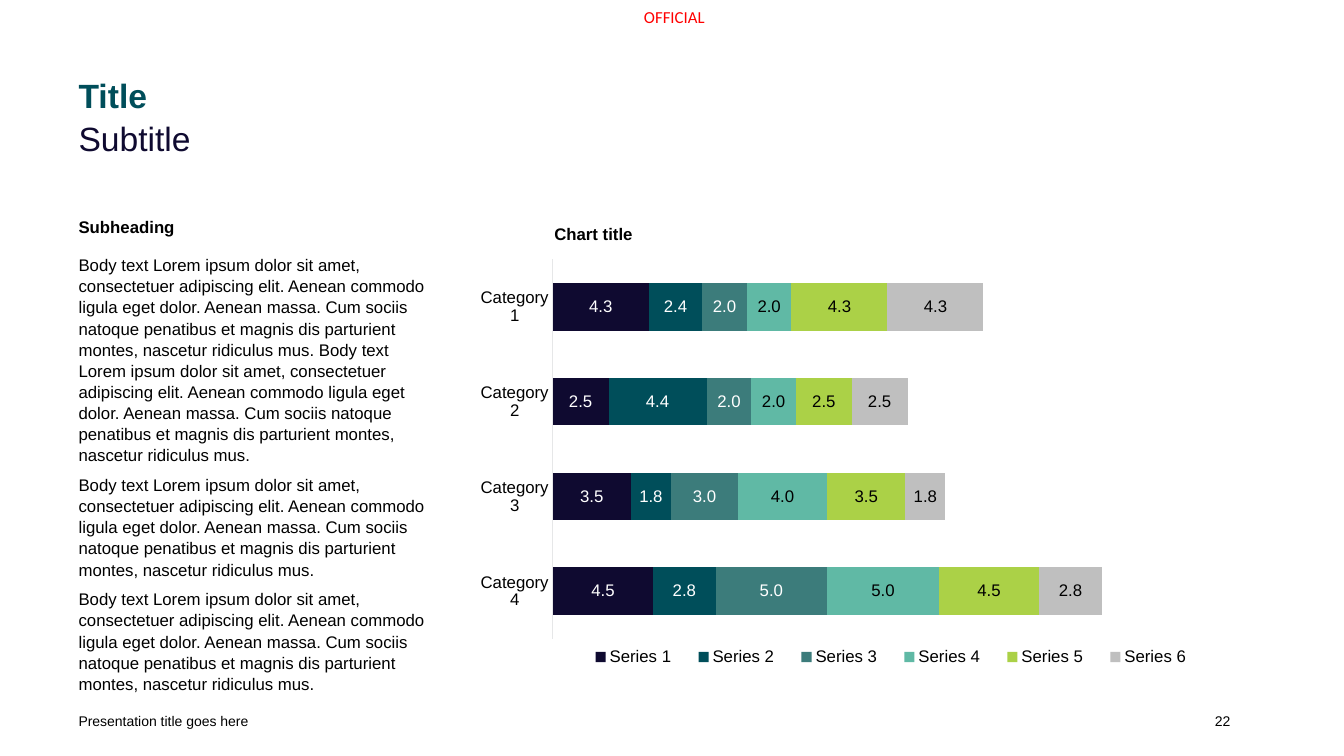
from lxml import etree
from pptx import Presentation
from pptx.chart.data import CategoryChartData
from pptx.dml.color import RGBColor
from pptx.enum.chart import XL_CHART_TYPE as ChartType
from pptx.enum.chart import XL_LEGEND_POSITION as LegendPosition
from pptx.enum.chart import XL_TICK_MARK as TickMark
from pptx.enum.text import MSO_ANCHOR as Anchor
from pptx.enum.text import MSO_AUTO_SIZE as AutoSize
from pptx.enum.text import PP_ALIGN as Align
from pptx.oxml.ns import qn
from pptx.util import Cm, Pt

# Colours
BLACK = RGBColor(0x00, 0x00, 0x00)
WHITE = RGBColor(0xFF, 0xFF, 0xFF)
RED = RGBColor(0xFF, 0x00, 0x00)
NAVY = RGBColor(0x0F, 0x0A, 0x30)
TEAL = RGBColor(0x00, 0x4E, 0x5A)
SEA = RGBColor(0x3C, 0x7C, 0x7B)
MINT = RGBColor(0x60, 0xB9, 0xA5)
LIME = RGBColor(0xAB, 0xD1, 0x47)
GREY = RGBColor(0xBF, 0xBF, 0xBF)
PALE = RGBColor(0xE6, 0xE7, 0xE8)

# Content
LOREM = ("Lorem ipsum dolor sit amet, consectetuer adipiscing elit. Aenean commodo "
         "ligula eget dolor. Aenean massa. Cum sociis natoque penatibus et magnis dis "
         "parturient montes, nascetur ridiculus mus.")
BODY = f"Body text {LOREM}"
CATEGORIES = [f"Category {n}" for n in range(1, 5)]
SERIES = [  # values, fill, label colour
    ((4.3, 2.5, 3.5, 4.5), NAVY, WHITE),
    ((2.4, 4.4, 1.8, 2.8), TEAL, WHITE),
    ((2, 2, 3, 5), SEA, WHITE),
    ((2, 2, 4, 5), MINT, BLACK),
    ((4.3, 2.5, 3.5, 4.5), LIME, BLACK),
    ((4.3, 2.5, 1.8, 2.8), GREY, BLACK),
]

LEFT = 1.98
CHART_LEFT = 11.99
CONTENT_TOP, CONTENT_HEIGHT = 5.44, 11.58
FOOTER_TOP, FOOTER_HEIGHT = 17.65, 1.02


def apply(target, values):
    for name, value in values.items():
        setattr(target, name, value)


class SlideBuilder:
    """Holds the text style and the slide being built."""

    def __init__(self, slide, font="Arial", size=12):
        self.slide, self.font, self.size = slide, font, size

    def style(self, font, color=BLACK, **changes):
        apply(font, {"name": self.font, "size": Pt(self.size), "bold": False} | changes)
        font.color.rgb = color

    def frame(self, shape, box, **changes):
        apply(shape, dict(zip(("left", "top", "width", "height"), map(Cm, box))))
        margins = dict.fromkeys(
            ("margin_left", "margin_top", "margin_right", "margin_bottom"), 0)
        apply(shape.text_frame, margins | {
            "word_wrap": True, "auto_size": AutoSize.NONE,
            "vertical_anchor": Anchor.TOP} | changes)
        return shape.text_frame

    def placeholder(self, index, box, paragraphs, line_spacing):
        """Fill a placeholder from (text, level, space after, font values)."""
        text_frame = self.frame(self.slide.placeholders[index], box)
        for number, (text, level, after, font) in enumerate(paragraphs):
            paragraph = text_frame.add_paragraph() if number else text_frame.paragraphs[0]
            apply(paragraph, {"level": level, "alignment": Align.LEFT,
                              "line_spacing": line_spacing,
                              "space_before": Pt(0), "space_after": Pt(after)})
            properties = paragraph._p.get_or_add_pPr()
            properties.set("marL", "0")
            properties.set("indent", "0")
            etree.SubElement(properties, qn("a:buNone"))
            run = paragraph.add_run()
            run.text = text
            self.style(run.font, **font)

    def label(self, box, text, align=Align.LEFT, wrap=True, anchor=Anchor.MIDDLE, **font):
        shape = self.slide.shapes.add_textbox(*map(Cm, box))
        text_frame = self.frame(shape, box, word_wrap=wrap, vertical_anchor=anchor)
        paragraph = text_frame.paragraphs[0]
        paragraph.alignment = align
        run = paragraph.add_run()
        run.text = text
        self.style(run.font, **font)

    def place(self, part, position, inner=False, **fractions):
        """Give a chart part a manual layout in fractions of the chart."""
        for old in part.findall(qn("c:layout")):
            part.remove(old)
        layout = etree.Element(qn("c:layout"))
        manual = etree.SubElement(layout, qn("c:manualLayout"))
        settings = {"layoutTarget": "inner"} if inner else {}
        settings |= {"xMode": "edge", "yMode": "edge"} | fractions
        for tag, value in settings.items():
            etree.SubElement(manual, qn(f"c:{tag}")).set("val", str(value))
        part.insert(position, layout)

    def stacked_bars(self, box, title):
        data = CategoryChartData(number_format="#,##0.0")
        data.categories = CATEGORIES
        for number, (values, _, _) in enumerate(SERIES, 1):
            data.add_series(f"Series {number}", values)
        chart = self.slide.shapes.add_chart(
            ChartType.BAR_STACKED, *map(Cm, box), data).chart
        self.style(chart.font)

        # Title, plot and legend
        chart.has_title = True
        heading = chart.chart_title.text_frame
        heading.text = title
        self.style(heading.paragraphs[0].runs[0].font, bold=True)
        self.place(chart.chart_title._element, 1, x=0.1, y=0.01)
        plot_area = chart._chartSpace.find(f".//{qn('c:plotArea')}")
        self.place(plot_area, 0, inner=True, x=0.102, y=0.095, w=0.887, h=0.825)
        chart.has_legend = True
        apply(chart.legend, {"position": LegendPosition.BOTTOM, "include_in_layout": False})
        self.style(chart.legend.font)
        self.place(chart.legend._element, 1, x=0.13, y=0.93, w=0.84, h=0.06)

        # Axes
        apply(chart.category_axis, {"reverse_order": True, "has_major_gridlines": False,
                                    "major_tick_mark": TickMark.NONE})
        self.style(chart.category_axis.tick_labels.font)
        line = chart.category_axis.format.line
        line.color.rgb, line.width = PALE, Pt(0.75)
        apply(chart.value_axis, {"visible": False, "has_major_gridlines": False,
                                 "minimum_scale": 0, "maximum_scale": 30})

        # Bars and value labels
        plot = chart.plots[0]
        apply(plot, {"gap_width": 100, "overlap": 100, "vary_by_categories": False})
        for series, (_, fill, label_color) in zip(plot.series, SERIES):
            series.format.fill.solid()
            series.format.fill.fore_color.rgb = fill
            apply(series.data_labels, {"show_value": True, "number_format": "#,##0.0",
                                       "number_format_is_linked": False})
            self.style(series.data_labels.font, label_color)


def main():
    presentation = Presentation()
    apply(presentation, {"slide_width": Cm(33.87), "slide_height": Cm(19.05)})
    builder = SlideBuilder(presentation.slides.add_slide(presentation.slide_layouts[3]))

    # Marking and headings
    builder.label((16.18, 0.18, 1.63, 0.51), "OFFICIAL", Align.CENTER, wrap=False,
                  anchor=Anchor.TOP, name="Calibri", color=RED)
    large = {"size": Pt(24)}
    builder.placeholder(0, (LEFT, 2.01, 29.08, 0.89),
                        [("Title", 0, 0, large | {"color": TEAL, "bold": True})], 0.9)
    builder.placeholder(1, (LEFT, 2.92, 29.03, 0.89),
                        [("Subtitle", 0, 12, large | {"color": NAVY})], 1.05)

    # Body text and chart
    texts = (f"{BODY} {BODY}", BODY, BODY)
    builder.placeholder(2, (LEFT, CONTENT_TOP, 8.99, CONTENT_HEIGHT),
                        [("Subheading", 0, 12, {"bold": True})]
                        + [(text, 1, 6, {}) for text in texts], 1.05)
    builder.stacked_bars((CHART_LEFT, CONTENT_TOP, 19.02, CONTENT_HEIGHT), "Chart title")

    # Footer
    builder.label((LEFT, FOOTER_TOP, 11.43, FOOTER_HEIGHT),
                  "Presentation title goes here", size=Pt(10))
    builder.label((23.39, FOOTER_TOP, 7.62, FOOTER_HEIGHT), "22", Align.RIGHT, size=Pt(10))

    presentation.save("out.pptx")


if __name__ == "__main__":
    main()
